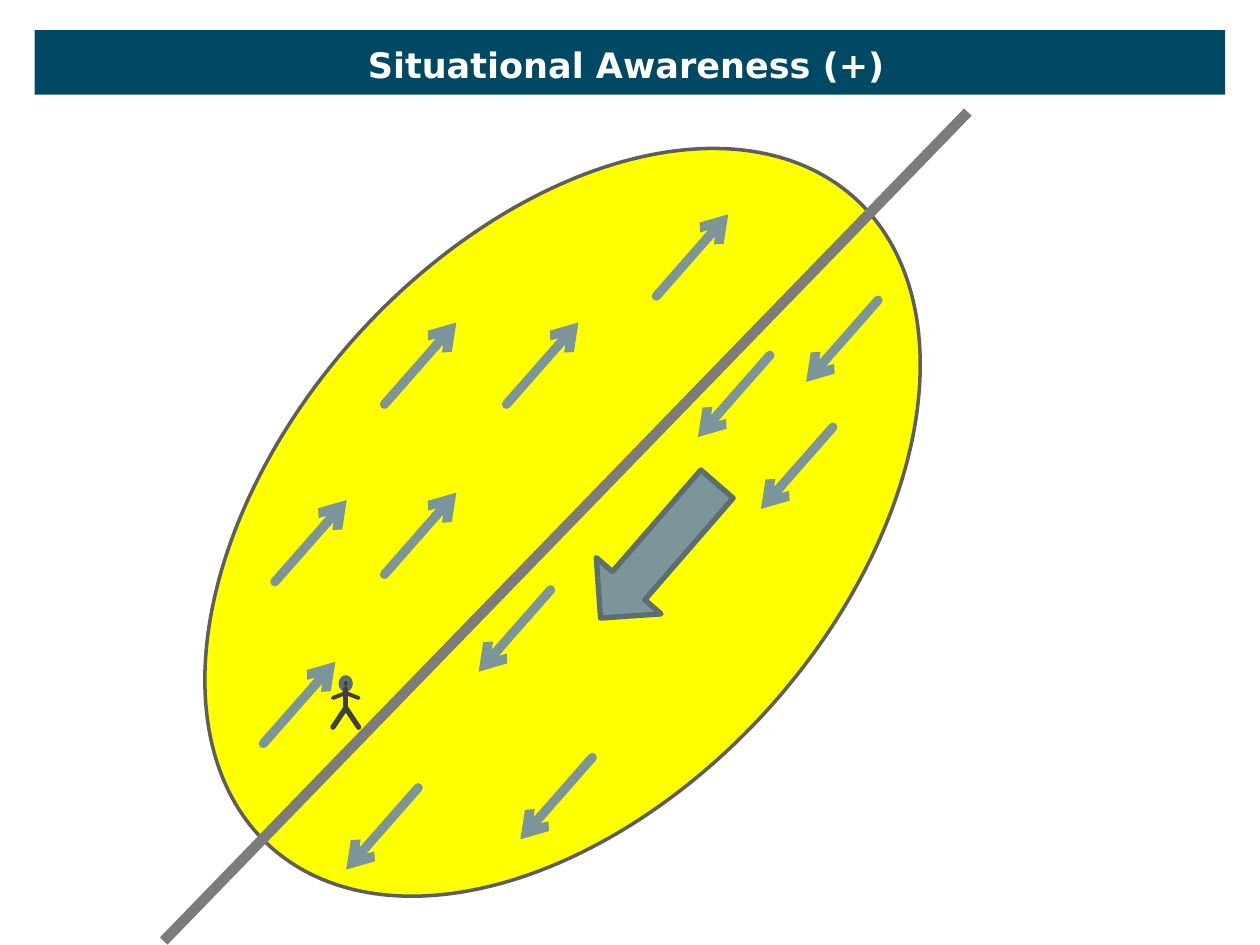
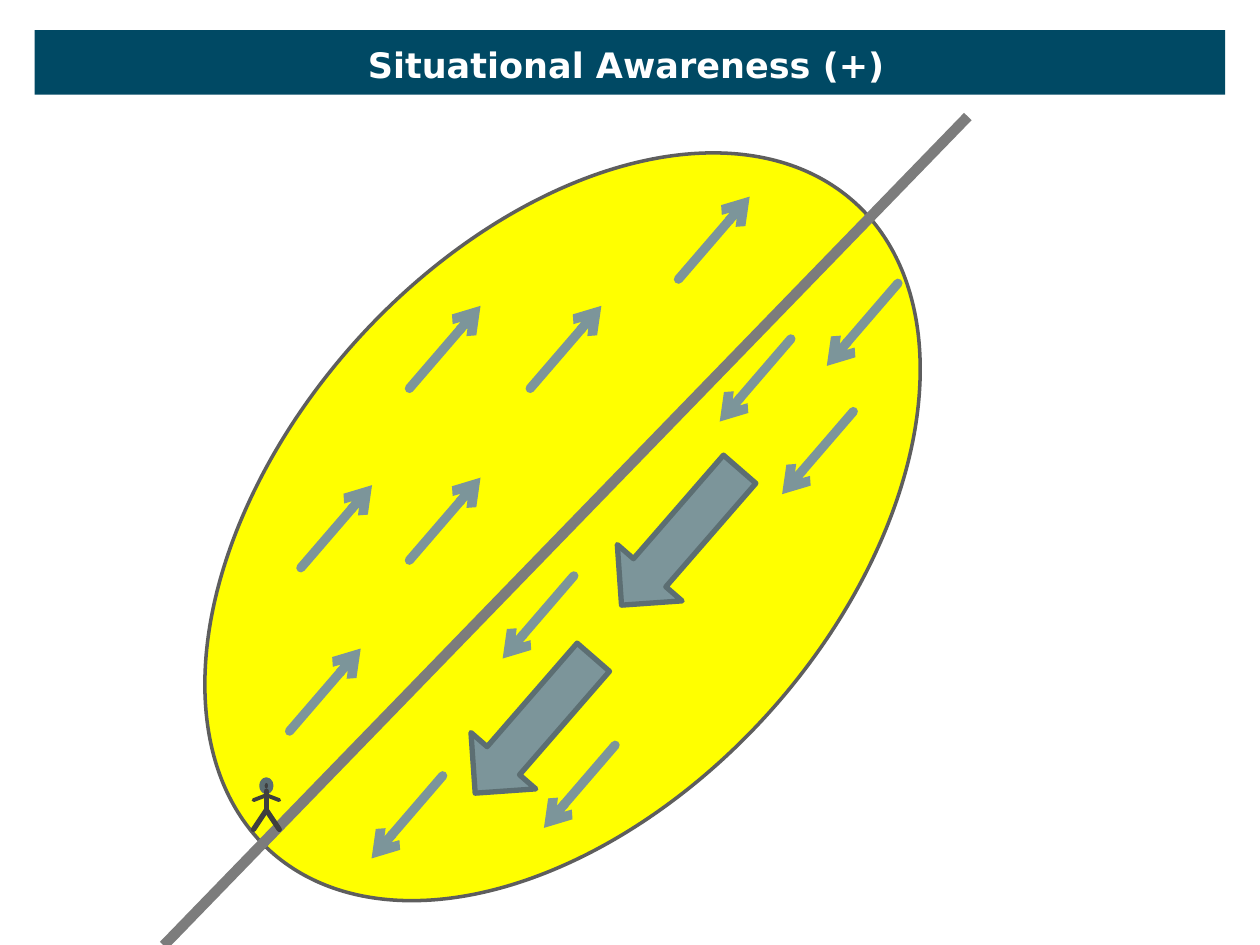
import pptx
import pptx.util
import pptx.dml.color
import pptx.enum.shapes
import pptx.enum.text
import pptx.oxml.ns
import pptx.oxml.xmlchemy

Cm = pptx.util.Cm
Pt = pptx.util.Pt
RGBColor = pptx.dml.color.RGBColor
SHAPE = pptx.enum.shapes.MSO_SHAPE

# Colours
TEAL = RGBColor(0x00, 0x49, 0x64)
WHITE = RGBColor(0xFF, 0xFF, 0xFF)
YELLOW = RGBColor(0xFF, 0xFF, 0x00)
OUTLINE = RGBColor(0x5E, 0x5E, 0x5E)
ROAD = RGBColor(0x7C, 0x7C, 0x7C)
FLOW = RGBColor(0x7C, 0x95, 0x9A)
FLOW_EDGE = RGBColor(0x5C, 0x6E, 0x72)
FIGURE = RGBColor(0x3F, 0x3F, 0x3F)

# Title style
TITLE = "Situational Awareness (+)"
TITLE_PLACE = {"left": Cm(7.06), "top": Cm(0.74), "width": Cm(11.13), "height": Cm(1.12)}
TITLE_FRAME = {"word_wrap": False, "vertical_anchor": pptx.enum.text.MSO_ANCHOR.MIDDLE,
               "auto_size": pptx.enum.text.MSO_AUTO_SIZE.NONE}
TITLE_FONT = {"name": "DejaVu Sans", "size": Pt(20), "bold": True}

# Small arrows: step from tail to tip, and tails on each side of the road (cm)
STEP_X, STEP_Y = 1.45, 1.65
UPWARD_TAILS = [(5.31, 14.99), (7.75, 8.15), (10.21, 8.15),
                (5.54, 11.73), (7.75, 11.58), (13.23, 5.97)]
DOWNWARD_TAILS = [(11.1, 11.89), (8.43, 15.88), (17.7, 6.05),
                  (11.94, 15.27), (16.79, 8.61), (15.52, 7.16)]

# What changes from slide to slide (cm)
SCENES = [
    {"field_drop": 0, "scale": (1, 1), "offset": (0, 0),
     "big_arrows": [(13.28, 11.11)], "big_length": 3.58, "neck": (6.97, 13.97)},
    {"field_drop": 0.09, "scale": (0.99, 1.01), "offset": (0.58, -0.4),
     "big_arrows": [(13.72, 10.83), (10.77, 14.62)], "big_length": 3.63,
     "neck": (5.37, 16.03)},
]


def set_attributes(target, values):
    for name, value in values.items():
        setattr(target, name, value)


def add_line_part(shape, tag, **attributes):
    line = shape.element.spPr.find(pptx.oxml.ns.qn("a:ln"))
    part = pptx.oxml.xmlchemy.OxmlElement(tag)
    for name, value in attributes.items():
        part.set(name, value)
    line.append(part)
    return line


def add_filled_shape(shapes, kind, center, size, fill, edge=None, weight=0, rotation=0):
    (x, y), (width, height) = center, size
    shape = shapes.add_shape(kind, Cm(x - width / 2), Cm(y - height / 2),
                             Cm(width), Cm(height))
    shape.shadow.inherit = False
    shape.rotation = rotation
    shape.fill.solid()
    shape.fill.fore_color.rgb = fill
    if edge is None:
        shape.line.fill.background()
    else:
        shape.line.color.rgb = edge
        shape.line.width = Pt(weight)
        add_line_part(shape, "a:round")
    return shape


def add_stroke(shapes, start, end, color, weight, rounded=True, arrow=False):
    connector = shapes.add_connector(pptx.enum.shapes.MSO_CONNECTOR.STRAIGHT,
                                     *[Cm(value) for value in (*start, *end)])
    connector.line.color.rgb = color
    connector.line.width = Pt(weight)
    line = add_line_part(connector, "a:round")
    if rounded:
        line.set("cap", "rnd")
    if arrow:
        add_line_part(connector, "a:tailEnd", type="arrow")
    connector.element.spPr.append(pptx.oxml.xmlchemy.OxmlElement("a:effectLst"))


def add_band_to_layout(layout, slide):
    """Build the title band and move it behind the layout's placeholders."""
    band = add_filled_shape(slide.shapes, SHAPE.RECTANGLE, (12.7, 1.26), (24, 1.3), TEAL)
    layout.shapes.element.insert(2, band.element)


def add_title(slide):
    title = slide.shapes.title
    set_attributes(title, TITLE_PLACE)
    frame = title.text_frame
    frame.text = TITLE
    set_attributes(frame, TITLE_FRAME)
    paragraph = frame.paragraphs[0]
    paragraph.alignment = pptx.enum.text.PP_ALIGN.CENTER
    font = paragraph.runs[0].font
    set_attributes(font, TITLE_FONT)
    font.color.rgb = WHITE


def add_field(slide, drop):
    """Yellow ellipse with the road across it."""
    add_filled_shape(slide.shapes, SHAPE.OVAL, (11.34, 10.53 + drop), (11.2, 17.6),
                     YELLOW, OUTLINE, 2, rotation=42)
    add_stroke(slide.shapes, (3.3, 18.97 + drop), (19.51, 2.26 + drop), ROAD, 6,
               rounded=False)


def add_small_arrows(slide, scale, offset):
    def place(x, y):
        return x * scale[0] + offset[0], y * scale[1] + offset[1]

    for tails, direction in ((UPWARD_TAILS, 1), (DOWNWARD_TAILS, -1)):
        for x, y in tails:
            tip = place(x + direction * STEP_X, y - direction * STEP_Y)
            add_stroke(slide.shapes, place(x, y), tip, FLOW, 5.25, arrow=True)


def add_person(slide, neck):
    x, y = neck
    shapes = slide.shapes.add_group_shape().shapes
    hip = (x, y + 0.3)
    add_filled_shape(shapes, SHAPE.FLOWCHART_CONNECTOR, (x, y - 0.19), (0.18, 0.23),
                     FIGURE, FLOW_EDGE, 3.03)
    add_stroke(shapes, (x, y - 0.08), hip, FIGURE, 3)
    for side in (-0.26, 0.26):
        add_stroke(shapes, neck, (x + side, y + 0.1), FIGURE, 2.25)
        add_stroke(shapes, hip, (x + side, y + 0.69), FIGURE, 3)


def add_scene(slide, scene):
    add_title(slide)
    add_field(slide, scene["field_drop"])
    add_small_arrows(slide, scene["scale"], scene["offset"])
    for center in scene["big_arrows"]:
        add_filled_shape(slide.shapes, SHAPE.DOWN_ARROW, center,
                         (1.73, scene["big_length"]), FLOW, FLOW_EDGE, 3.03, rotation=41)
    add_person(slide, scene["neck"])


def main():
    presentation = pptx.Presentation()
    presentation.slide_width = Cm(25.4)
    presentation.slide_height = Cm(19.05)
    layout = presentation.slide_layouts[5]
    slides = [presentation.slides.add_slide(layout) for _ in SCENES]
    add_band_to_layout(layout, slides[0])
    for slide, scene in zip(slides, SCENES):
        add_scene(slide, scene)
    presentation.save("out.pptx")


if __name__ == "__main__":
    main()
